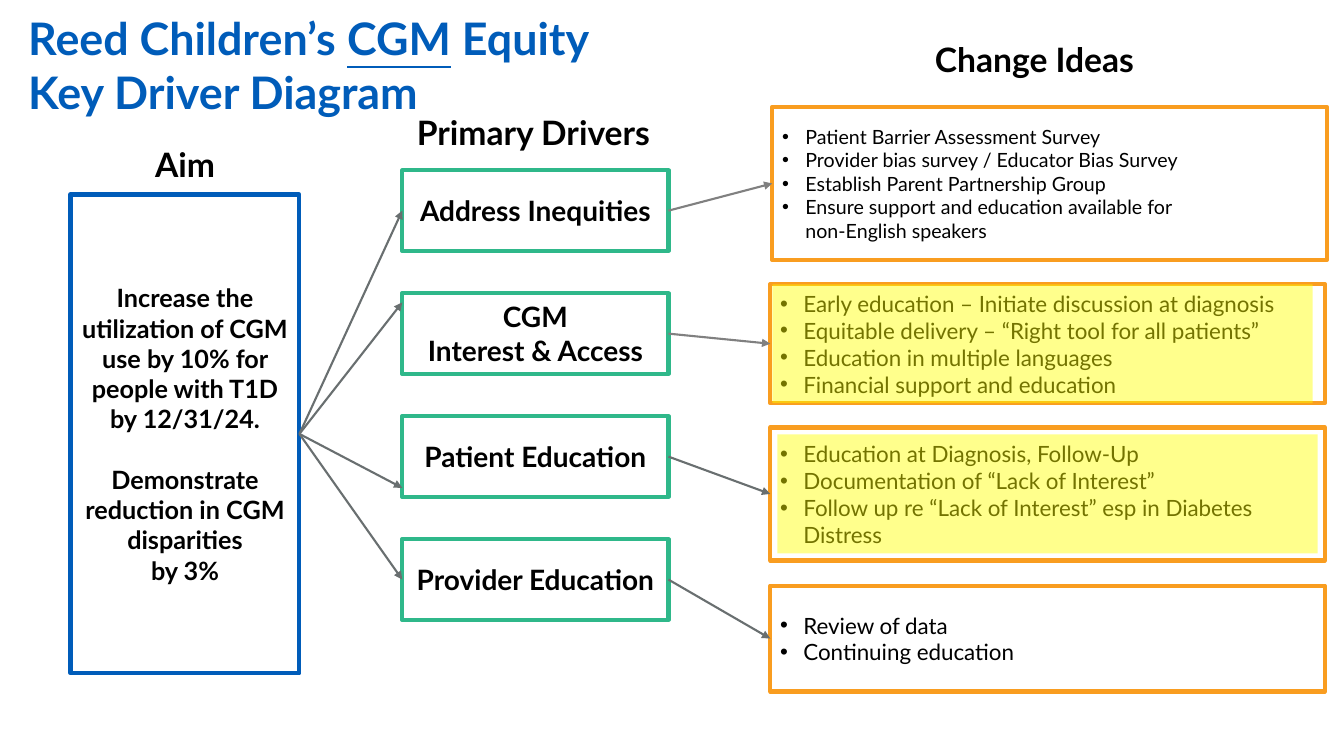
from dataclasses import dataclass

from lxml.etree import SubElement
from pptx import Presentation
from pptx.dml.color import RGBColor
from pptx.enum.shapes import MSO_CONNECTOR, MSO_SHAPE
from pptx.enum.text import MSO_ANCHOR, MSO_AUTO_SIZE, PP_ALIGN
from pptx.oxml.ns import qn
from pptx.util import Inches, Pt


@dataclass(frozen=True)
class Theme:
    font: str = "Lato"
    ink: str = "000000"
    blue: str = "005CB9"
    green: str = "2FB88A"
    orange: str = "F99D20"
    yellow: str = "FFFF00"
    slate: str = "696F70"
    grey: str = "808080"
    title: int = 32
    heading: int = 24
    driver: int = 20
    aim: int = 18
    idea: int = 16
    small: int = 14


@dataclass(frozen=True)
class Area:
    left: float
    top: float
    width: float
    height: float

    def lengths(self):
        return [Inches(n) for n in (self.left, self.top, self.width, self.height)]


@dataclass(frozen=True)
class Heading:
    text: str
    area: Area


@dataclass(frozen=True)
class Branch:
    """A driver, its change ideas and the arrows that lead to them."""
    driver: str
    ideas: tuple[str, ...]
    area: Area
    size: int
    arrow_color: str
    aim_arrow_top: float | None = None


THEME = Theme()
DRIVER_LEFT, DRIVER_TOP, DRIVER_PITCH = 3.99, 1.69, 1.22
DRIVER_WIDTH, DRIVER_HEIGHT = 2.64, 0.8
AIM_AREA = Area(0.7, 1.93, 2.27, 4.75)
AIM = (
    "Increase the utilization of CGM use by 10% for people with T1D by 12/31/24.",
    "Demonstrate reduction in CGM disparities\nby 3%",
)
HEADINGS = (
    Heading("Aim", Area(1.22, 1.38, 1.23, 0.5)),
    Heading("Primary Drivers", Area(3.95, 1.06, 2.68, 0.5)),
    Heading("Change Ideas", Area(7.51, 0.34, 5.5, 0.5)),
)
BRANCHES = (
    Branch("Address Inequities", (
        "Patient Barrier Assessment Survey",
        "Provider bias survey / Educator Bias Survey",
        "Establish Parent Partnership Group",
        "Ensure support and education available for\nnon-English speakers",
    ), Area(7.66, 1.06, 5.5, 1.52), THEME.small, THEME.grey),
    Branch("CGM\nInterest & Access", (
        "Early education – Initiate discussion at diagnosis",
        "Equitable delivery – “Right tool for all patients”",
        "Education in multiple languages",
        "Financial support and education",
    ), Area(7.64, 2.82, 5.5, 1.18), THEME.idea, THEME.grey, 3.0),
    Branch("Patient Education", (
        "Education at Diagnosis, Follow-Up",
        "Documentation of “Lack of Interest”",
        "Follow up re “Lack of Interest” esp in Diabetes Distress",
    ), Area(7.64, 4.24, 5.5, 1.32), THEME.idea, THEME.slate, 4.84),
    Branch("Provider Education", (
        "Review of data",
        "Continuing education",
    ), Area(7.64, 5.81, 5.5, 1.05), THEME.idea, THEME.slate),
)
HIGHLIGHTS = (Area(7.66, 2.82, 5.36, 1.18), Area(7.71, 4.31, 5.36, 1.18))


def add_text(para, text: str, size: int, color: str = THEME.ink, **extra) -> None:
    """Add spans to a paragraph, with a line break at each newline."""
    formats = {"name": THEME.font, "size": Pt(size), **extra}
    for index, line in enumerate(text.split("\n")):
        if index:
            para.add_line_break()
        span = para.add_run()
        span.text = line
        span.font.color.rgb = RGBColor.from_string(color)
        for name, value in formats.items():
            setattr(span.font, name, value)


def add_bullet(para) -> None:
    properties = para._p.get_or_add_pPr()
    indent = Inches(0.23)
    properties.set("marL", str(indent))
    properties.set("indent", str(-indent))
    SubElement(properties, qn("a:buFont"), typeface="Arial")
    SubElement(properties, qn("a:buChar"), char="•")


def add_box(page, area: Area, color: str, texts: tuple[str, ...], size: int,
            bulleted: bool = False, gap: float = 0):
    """Draw an outlined box of bullets or of bold centred paragraphs."""
    box = page.shapes.add_shape(MSO_SHAPE.RECTANGLE, *area.lengths())
    box.shadow.inherit = False
    box.fill.background()
    box.line.color.rgb = RGBColor.from_string(color)
    box.line.width = Pt(3)
    frame = box.text_frame
    frame.word_wrap = True
    frame.vertical_anchor = MSO_ANCHOR.MIDDLE
    for index, text in enumerate(texts):
        para = frame.add_paragraph() if index else frame.paragraphs[0]
        para.alignment = PP_ALIGN.LEFT if bulleted else PP_ALIGN.CENTER
        if index and gap:
            para.space_before = Pt(gap)
        if bulleted:
            add_bullet(para)
        add_text(para, text, size, bold=not bulleted)
    return box


def add_arrow(page, target, source, color: str, target_top: float | None = None) -> None:
    """Point from the right side of source to the left side of target."""
    top = Inches(target_top) if target_top else target.top
    arrow = page.shapes.add_connector(
        MSO_CONNECTOR.STRAIGHT, target.left, top, source.left, source.top)
    arrow.end_connect(source, 3)
    if target_top is None:
        arrow.begin_connect(target, 1)
    arrow.line.color.rgb = RGBColor.from_string(color)
    arrow.line.width = Pt(1.5)
    SubElement(arrow.line._get_or_add_ln(), qn("a:headEnd"), type="triangle")
    SubElement(arrow._element.spPr, qn("a:effectLst"))


def add_title(page) -> None:
    title = page.shapes.title
    title.left, title.top, title.width, title.height = Area(0.28, 0.11, 6.8, 1.01).lengths()
    frame = title.text_frame
    formats = {
        "margin_left": 0, "margin_top": 0, "margin_right": 0, "margin_bottom": 0,
        "word_wrap": True, "auto_size": MSO_AUTO_SIZE.NONE,
        "vertical_anchor": MSO_ANCHOR.TOP,
    }
    for name, value in formats.items():
        setattr(frame, name, value)
    para = frame.paragraphs[0]
    para.alignment = PP_ALIGN.LEFT
    for text, underline in (("Reed Children’s ", False), ("CGM", True),
                            (" Equity\nKey Driver Diagram", False)):
        add_text(para, text, THEME.title, THEME.blue, bold=True, underline=underline)


def add_heading(page, heading: Heading) -> None:
    box = page.shapes.add_textbox(*heading.area.lengths())
    frame = box.text_frame
    frame.word_wrap = True
    frame.auto_size = MSO_AUTO_SIZE.SHAPE_TO_FIT_TEXT
    para = frame.paragraphs[0]
    para.alignment = PP_ALIGN.CENTER
    add_text(para, heading.text, THEME.heading, bold=True)


def add_highlight(page, area: Area) -> None:
    marker = page.shapes.add_shape(MSO_SHAPE.RECTANGLE, *area.lengths())
    marker.shadow.inherit = False
    marker.line.fill.background()
    marker.fill.solid()
    marker.fill.fore_color.rgb = RGBColor.from_string(THEME.yellow)
    color = marker._element.spPr.find(qn("a:solidFill"))[0]
    SubElement(color, qn("a:alpha"), val="45000")


def main() -> None:
    deck = Presentation()
    deck.slide_width, deck.slide_height = Inches(13.33), Inches(7.5)
    page = deck.slides.add_slide(deck.slide_layouts[5])
    add_title(page)
    for heading in HEADINGS:
        add_heading(page, heading)
    aim = add_box(page, AIM_AREA, THEME.blue, AIM, THEME.aim, gap=THEME.aim * 1.2)
    for row, branch in enumerate(BRANCHES):
        area = Area(DRIVER_LEFT, DRIVER_TOP + row * DRIVER_PITCH, DRIVER_WIDTH, DRIVER_HEIGHT)
        driver = add_box(page, area, THEME.green, (branch.driver,), THEME.driver)
        ideas = add_box(page, branch.area, THEME.orange, branch.ideas, branch.size, bulleted=True)
        add_arrow(page, driver, aim, THEME.slate, branch.aim_arrow_top)
        add_arrow(page, ideas, driver, branch.arrow_color)
    for area in HIGHLIGHTS:
        add_highlight(page, area)
    deck.save("out.pptx")


if __name__ == "__main__":
    main()
